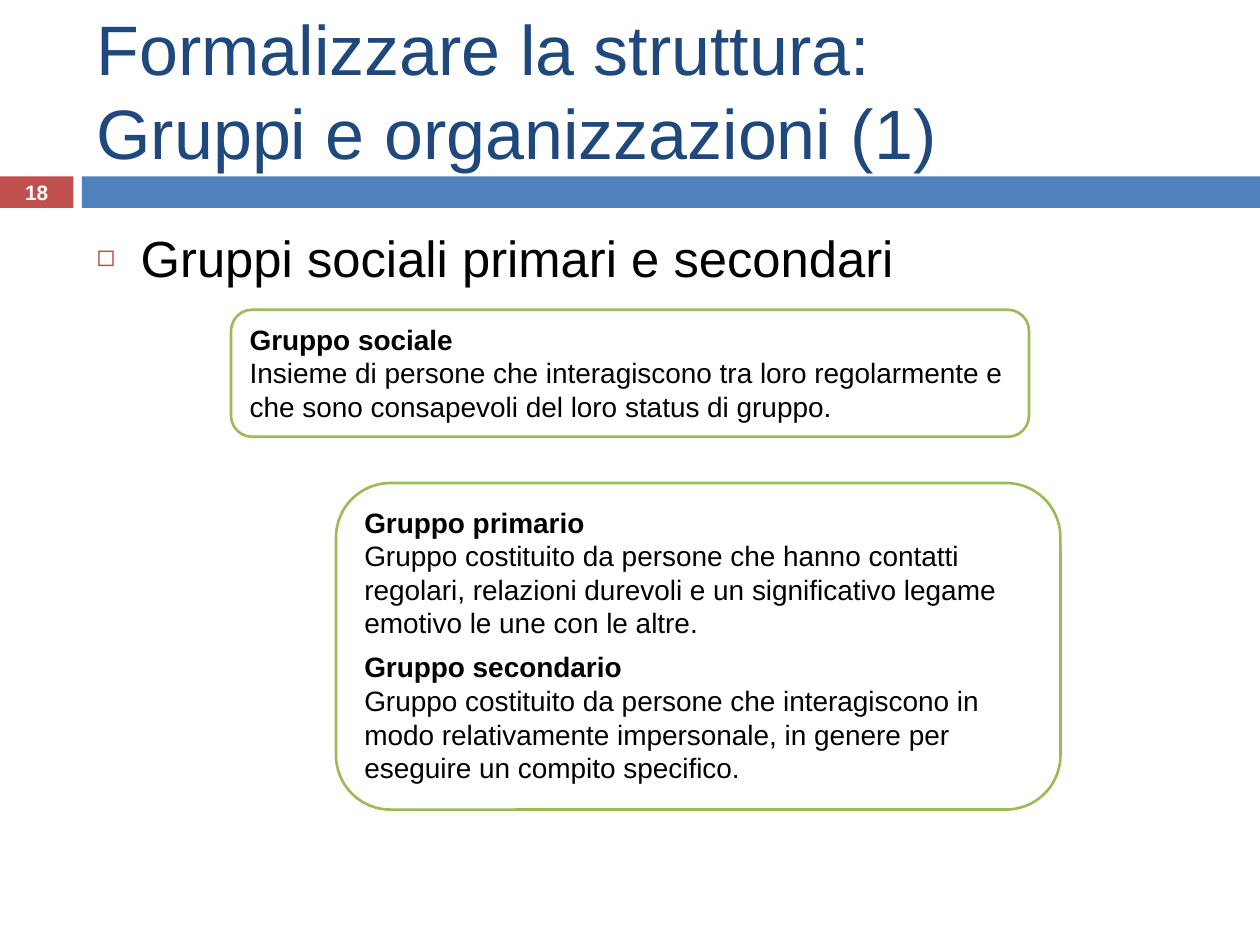
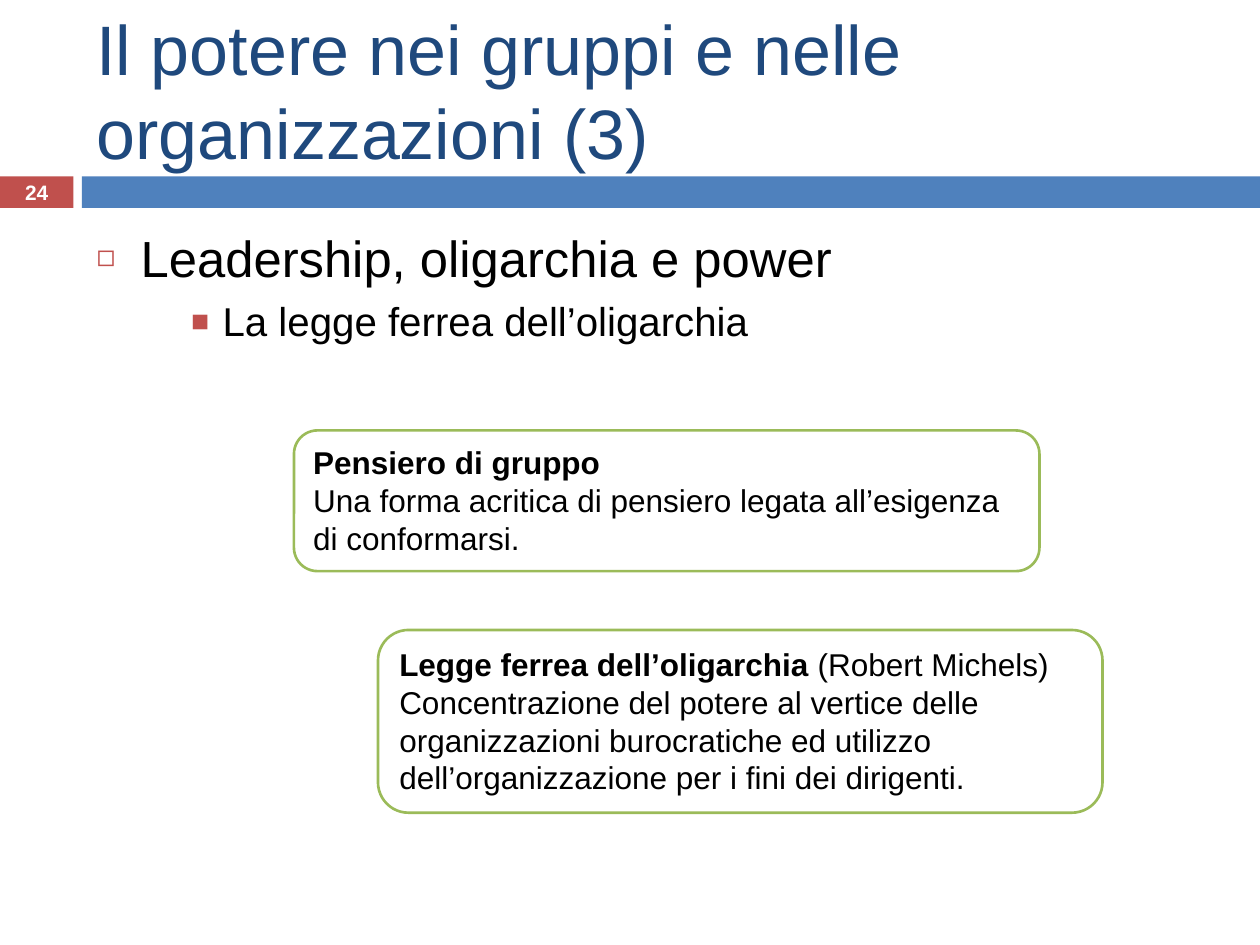
from lxml import etree
from pptx import Presentation
from pptx.dml.color import RGBColor
from pptx.enum.shapes import MSO_SHAPE
from pptx.enum.text import MSO_ANCHOR, MSO_AUTO_SIZE, PP_ALIGN
from pptx.oxml.ns import qn
from pptx.util import Inches, Pt

RECT, ROUNDED = MSO_SHAPE.RECTANGLE, MSO_SHAPE.ROUNDED_RECTANGLE
TOP, MIDDLE = MSO_ANCHOR.TOP, MSO_ANCHOR.MIDDLE
LEFT, CENTER = PP_ALIGN.LEFT, PP_ALIGN.CENTER
NO_FIT = MSO_AUTO_SIZE.NONE

COLORS = {"title": "1F497D", "band": "4F81BD", "accent": "C0504D",
          "card_line": "9BBB59", "text": "000000", "white": "FFFFFF"}
FONT = "Arial"
CELL = Inches(1) / 12
COLUMNS, ROWS = 120, 90
MARGIN, CONTENT_WIDTH = 8, 107
BAND_TOP, BAND_HEIGHT, BAND_LEFT, NUMBER_WIDTH = 16.8, 3, 7.8, 7
BULLETS = {
    0: {"char": "◻", "share": 60, "size": 29, "left": 0.35, "hang": 0.35, "before": 0},
    2: {"char": "■", "share": 75, "size": 23, "left": 1, "hang": 0.25, "before": 5},
}

SLIDES = [
    {
        "number": "18",
        "title": ["Formalizzare la struttura:", "Gruppi e organizzazioni (1)"],
        "list": [(0, "Gruppi sociali primari e secondari")],
        "size": 16,
        "cards": [
            ((22, 29.5, 76, 12.1), [
                ("Gruppo sociale", "",
                 "Insieme di persone che interagiscono tra loro regolarmente e "
                 "che sono consapevoli del loro status di gruppo."),
            ]),
            ((32, 46, 69, 31.1), [
                ("Gruppo primario", "",
                 "Gruppo costituito da persone che hanno contatti regolari, relazioni "
                 "durevoli e un significativo legame emotivo le une con le altre."),
                ("Gruppo secondario", "",
                 "Gruppo costituito da persone che interagiscono in modo relativamente "
                 "impersonale, in genere per eseguire un compito specifico."),
            ]),
        ],
    },
    {
        "number": "24",
        "title": ["Il potere nei gruppi e nelle organizzazioni (3)"],
        "list": [(0, "Leadership, oligarchia e power"),
                 (2, "La legge ferrea dell’oligarchia")],
        "size": 18,
        "cards": [
            ((28, 41, 71, 13.4), [
                ("Pensiero di gruppo", "",
                 "Una forma acritica di pensiero legata all’esigenza di conformarsi."),
            ]),
            ((36, 60, 69, 17.4), [
                ("Legge ferrea dell’oligarchia", " (Robert Michels)",
                 "Concentrazione del potere al vertice delle organizzazioni burocratiche "
                 "ed utilizzo dell’organizzazione per i fini dei dirigenti."),
            ]),
        ],
    },
]


def place(shape, left, top, width, height, anchor):
    shape.left, shape.top = round(left * CELL), round(top * CELL)
    shape.width, shape.height = round(width * CELL), round(height * CELL)
    frame = shape.text_frame
    frame.word_wrap = True
    frame.auto_size = NO_FIT
    frame.vertical_anchor = anchor
    return frame


def add_span(para, text, size, color="text", bold=False):
    span = para.add_run()
    span.text = text
    span.font.name = FONT
    span.font.size = Pt(size)
    span.font.bold = bold
    span.font.color.rgb = RGBColor.from_string(COLORS[color])


deck = Presentation()
deck.slide_width, deck.slide_height = round(COLUMNS * CELL), round(ROWS * CELL)

for content in SLIDES:
    page = deck.slides.add_slide(deck.slide_layouts[1])

    frame = place(page.shapes.title, MARGIN, 2, CONTENT_WIDTH, 13, MIDDLE)
    para = frame.paragraphs[0]
    para.alignment = LEFT
    for index, line in enumerate(content["title"]):
        if index:
            para.add_line_break()
        add_span(para, line, 40, "title")

    frame = place(page.placeholders[1], MARGIN, 21, CONTENT_WIDTH, 59, TOP)
    for index, (level, text) in enumerate(content["list"]):
        para = frame.add_paragraph() if index else frame.paragraphs[0]
        style = BULLETS[level]
        para.level = level
        para.space_before = Pt(style["before"])
        props = para._p.get_or_add_pPr()
        props.set("marL", str(Inches(style["left"])))
        props.set("indent", str(-Inches(style["hang"])))
        tint = etree.SubElement(props, qn("a:buClr"))
        etree.SubElement(tint, qn("a:srgbClr"), val=COLORS["accent"])
        etree.SubElement(props, qn("a:buSzPct"), val=str(style["share"] * 1000))
        etree.SubElement(props, qn("a:buFont"), typeface=FONT)
        etree.SubElement(props, qn("a:buChar"), char=style["char"])
        add_span(para, text, style["size"])

    for left, width, color, label in [
        (0, NUMBER_WIDTH, "accent", content["number"]),
        (BAND_LEFT, COLUMNS - BAND_LEFT, "band", ""),
    ]:
        band = page.shapes.add_shape(RECT, 0, 0, 0, 0)
        frame = place(band, left, BAND_TOP, width, BAND_HEIGHT, MIDDLE)
        band.shadow.inherit = False
        band.fill.solid()
        band.fill.fore_color.rgb = RGBColor.from_string(COLORS[color])
        band.line.fill.background()
        if label:
            frame.margin_top = frame.margin_bottom = 0
            frame.paragraphs[0].alignment = CENTER
            add_span(frame.paragraphs[0], label, 11.9, "white", True)

    for area, definitions in content["cards"]:
        card = page.shapes.add_shape(ROUNDED, 0, 0, 0, 0)
        frame = place(card, *area, TOP)
        card.shadow.inherit = False
        card.fill.solid()
        card.fill.fore_color.rgb = RGBColor.from_string(COLORS["white"])
        card.line.color.rgb = RGBColor.from_string(COLORS["card_line"])
        card.line.width = Pt(1.5)
        for index, (term, author, meaning) in enumerate(definitions):
            para = frame.add_paragraph() if index else frame.paragraphs[0]
            para.alignment = LEFT
            para.space_before = Pt(6 if index else 0)
            add_span(para, term, content["size"], bold=True)
            if author:
                add_span(para, author, content["size"])
            para = frame.add_paragraph()
            para.alignment = LEFT
            add_span(para, meaning, content["size"])

deck.save("out.pptx")
